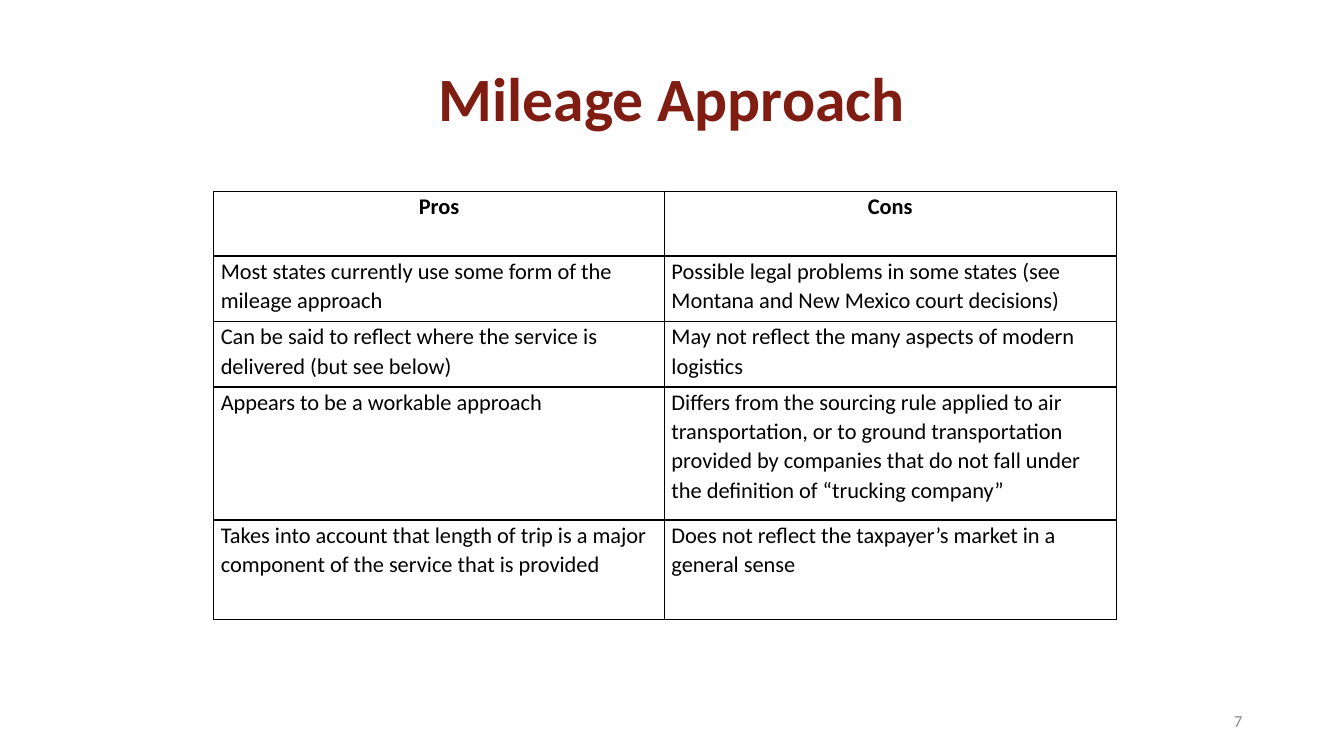
import pptx
import pptx.util
import pptx.dml.color
import pptx.enum.text
import pptx.oxml
import pptx.oxml.ns

WIDTH, HEIGHT = 13.33, 7.5
FONT = "Calibri"
COLOURS = {"title": "7F1D13", "ink": "000000", "number": "8C8C8C", "paper": "FFFFFF"}
ALIGN = pptx.enum.text.PP_ALIGN
ANCHOR = pptx.enum.text.MSO_ANCHOR

COLUMN_WIDTHS = [4.47, 4.48]
ROW_HEIGHTS = [0.64, 0.65, 0.65, 1.32, 0.99]
ROWS = [
    ("Pros", "Cons"),
    ("Most states currently use some form of the mileage approach",
     "Possible legal problems in some states (see Montana and New Mexico court decisions)"),
    ("Can be said to reflect where the service is delivered (but see below)",
     "May not reflect the many aspects of modern logistics"),
    ("Appears to be a workable approach",
     "Differs from the sourcing rule applied to air transportation, or to ground "
     "transportation provided by companies that do not fall under the definition of "
     "“trucking company”"),
    ("Takes into account that length of trip is a major component of the service that is provided",
     "Does not reflect the taxpayer’s market in a general sense"),
]


def inches(*lengths):
    return [pptx.util.Inches(length) for length in lengths]


def colour(name):
    return pptx.dml.color.RGBColor.from_string(COLOURS[name])


def write(frame, text, size, ink, align, bold=False, spacing=1.0):
    frame.word_wrap = True
    frame.text = text
    para = frame.paragraphs[0]
    para.alignment = align
    para.line_spacing = spacing
    for span in para.runs:
        span.font.name = FONT
        span.font.size = pptx.util.Pt(size)
        span.font.bold = bold
        span.font.color.rgb = colour(ink)


def add_label(page, place, text, **style):
    box = page.shapes.add_textbox(*inches(*place))
    box.text_frame.vertical_anchor = ANCHOR.MIDDLE
    write(box.text_frame, text, **style)


def add_borders(cell, width=1):
    properties = cell._tc.get_or_add_tcPr()
    for position, side in enumerate("LRTB"):
        border = pptx.oxml.parse_xml(
            f'<a:ln{side} {pptx.oxml.ns.nsdecls("a")} w="{pptx.util.Pt(width)}">'
            f'<a:solidFill><a:srgbClr val="{COLOURS["ink"]}"/></a:solidFill></a:ln{side}>')
        properties.insert(position, border)


def fill_cell(cell, text, heading):
    cell.margin_left = cell.margin_right = pptx.util.Inches(0.07)
    cell.margin_top = cell.margin_bottom = 0
    cell.vertical_anchor = ANCHOR.TOP
    cell.fill.solid()
    cell.fill.fore_color.rgb = colour("paper")
    add_borders(cell)
    write(cell.text_frame, text, size=16, ink="ink", bold=heading, spacing=1.07,
          align=ALIGN.CENTER if heading else ALIGN.LEFT)


def add_comparison(page, left, top):
    place = inches(left, top, sum(COLUMN_WIDTHS), sum(ROW_HEIGHTS))
    table = page.shapes.add_table(len(ROWS), len(COLUMN_WIDTHS), *place).table
    table.horz_banding = False
    for column, width in zip(table.columns, COLUMN_WIDTHS):
        column.width = pptx.util.Inches(width)
    for row_index, (row, height) in enumerate(zip(table.rows, ROW_HEIGHTS)):
        row.height = pptx.util.Inches(height)
        for cell, text in zip(row.cells, ROWS[row_index]):
            fill_cell(cell, text, heading=row_index == 0)


def main():
    deck = pptx.Presentation()
    deck.slide_width, deck.slide_height = inches(WIDTH, HEIGHT)
    page = deck.slides.add_slide(deck.slide_layouts[6])
    add_label(page, (0, 0.4, WIDTH, 1.21), "Mileage Approach", size=44, ink="title",
              align=ALIGN.CENTER, bold=True, spacing=0.9)
    add_comparison(page, 2.12, 1.9)
    add_label(page, (9.42, 6.95, 3, 0.4), "7", size=12, ink="number", align=ALIGN.RIGHT)
    deck.save("out.pptx")


if __name__ == "__main__":
    main()
